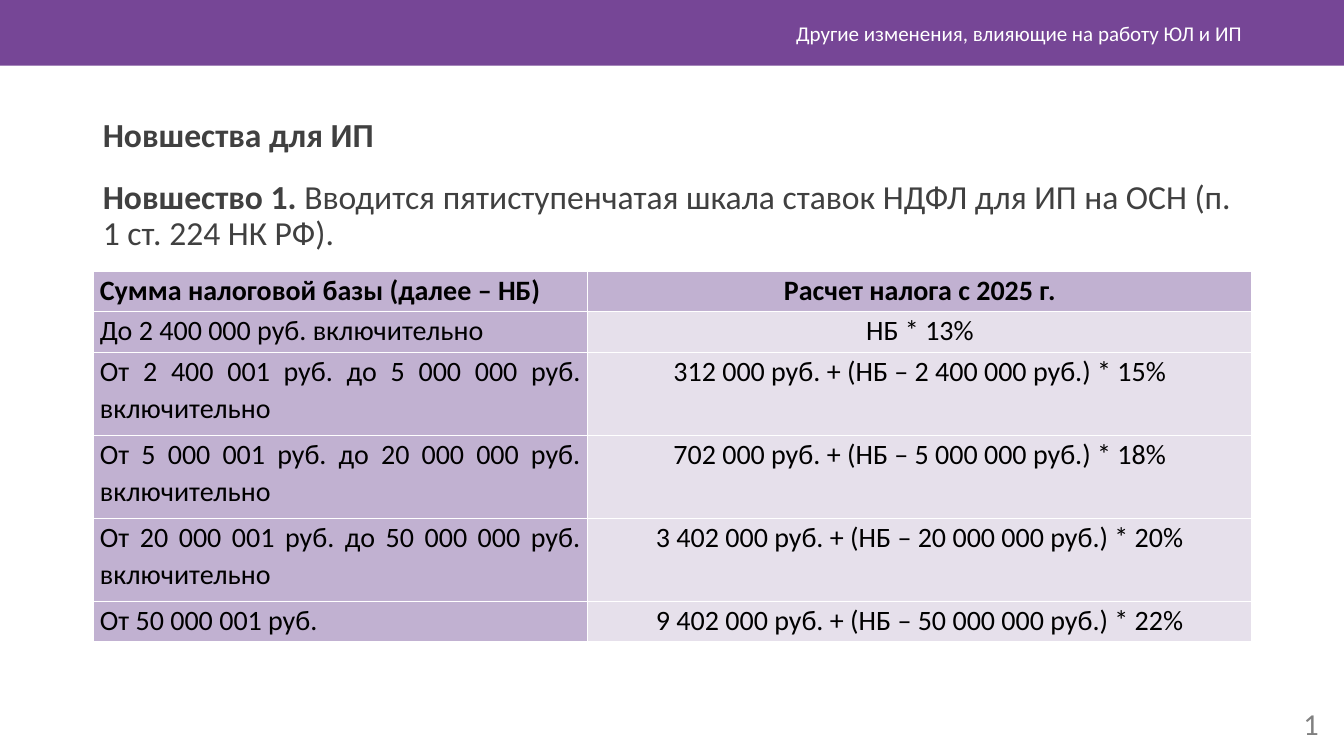
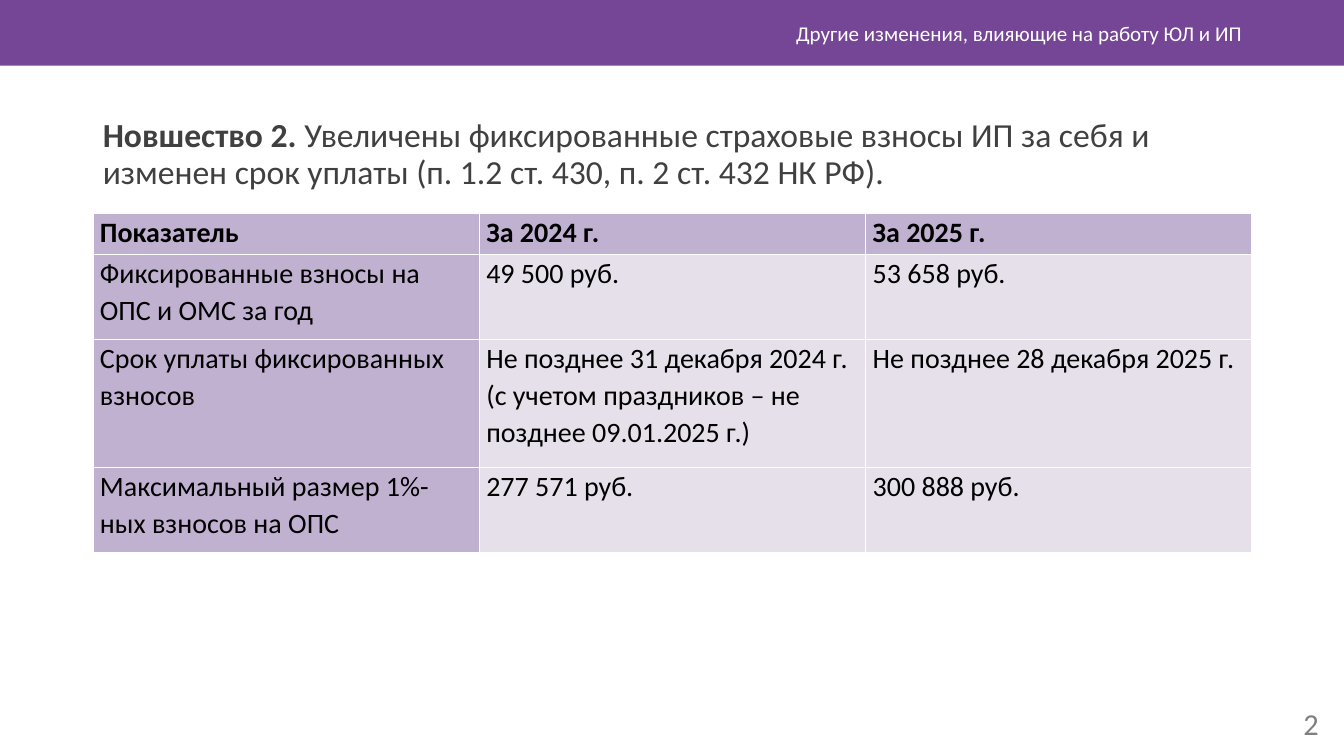
"""Build two slides on tax changes for sole proprietors."""
from pptx import Presentation
from pptx.dml.color import RGBColor as RGB
from pptx.enum.shapes import MSO_SHAPE as SHAPE
from pptx.enum.text import MSO_ANCHOR as ANCHOR, MSO_AUTO_SIZE as AUTOSIZE, PP_ALIGN as ALIGN
from pptx.oxml import parse_xml
from pptx.oxml.ns import nsdecls
from pptx.util import Pt

COLORS = {
    "band": "764696",
    "white": "FFFFFF",
    "body": "404040",
    "number": "808080",
    "cell_text": "000000",
    "label_fill": "C1B1D1",
    "value_fill": "E6E0EB",
}
FONT = "Calibri"
WIDTH, HEIGHT = 960, 540
LEFT, CONTENT_WIDTH = 66.4, 828
TITLE = "Другие изменения, влияющие на работу ЮЛ и ИП"

TAX_ROWS = [
    ("Сумма налоговой базы (далее – НБ)", "Расчет налога с 2025 г."),
    ("До 2 400 000 руб. включительно", "НБ * 13%"),
    ("От 2 400 001 руб. до 5 000 000 руб. включительно",
     "312 000 руб. + (НБ – 2 400 000 руб.) * 15%"),
    ("От 5 000 001 руб. до 20 000 000 руб. включительно",
     "702 000 руб. + (НБ – 5 000 000 руб.) * 18%"),
    ("От 20 000 001 руб. до 50 000 000 руб. включительно",
     "3 402 000 руб. + (НБ – 20 000 000 руб.) * 20%"),
    ("От 50 000 001 руб.", "9 402 000 руб. + (НБ – 50 000 000 руб.) * 22%"),
]
FEE_ROWS = [
    ("Показатель", "За 2024 г.", "За 2025 г."),
    ("Фиксированные взносы на ОПС и ОМС за год", "49 500 руб.", "53 658 руб."),
    ("Срок уплаты фиксированных взносов",
     "Не позднее 31 декабря 2024 г. (с учетом праздников – не позднее 09.01.2025 г.)",
     "Не позднее 28 декабря 2025 г."),
    ("Максимальный размер 1%-ных взносов на ОПС", "277 571 руб.", "300 888 руб."),
]


class Deck:
    """Hold the shared style and the current slide."""

    def __init__(self):
        self.prs = Presentation()
        self.prs.slide_width, self.prs.slide_height = Pt(WIDTH), Pt(HEIGHT)
        self.s = None

    def color(self, name):
        return RGB.from_string(COLORS[name])

    def style(self, r, size, color, bold=False):
        r.font.name, r.font.size, r.font.bold = FONT, Pt(size), bold
        r.font.color.rgb = self.color(color)

    def add_slide(self):
        self.s = self.prs.slides.add_slide(self.prs.slide_layouts[5])
        self.band()
        self.title()
        self.number()

    def band(self):
        sp = self.s.shapes.add_shape(SHAPE.RECTANGLE, 0, 0, Pt(WIDTH), Pt(47))
        sp.shadow.inherit = False
        sp.fill.solid()
        sp.fill.fore_color.rgb = self.color("band")
        sp.line.fill.background()
        self.s.shapes.element.insert(2, sp.element)

    def title(self):
        sp = self.s.shapes.title
        sp.left, sp.top, sp.width, sp.height = Pt(255), Pt(9), Pt(639.4), Pt(29)
        tf = sp.text_frame
        tf.text = TITLE
        tf.auto_size, tf.vertical_anchor = AUTOSIZE.NONE, ANCHOR.MIDDLE
        p = tf.paragraphs[0]
        p.alignment = ALIGN.RIGHT
        self.style(p.runs[0], 15, "white")

    def text_frame(self, left, top, width, height):
        sp = self.s.shapes.add_textbox(Pt(left), Pt(top), Pt(width), Pt(height))
        sp.text_frame.word_wrap = True
        return sp.text_frame

    def number(self):
        tf = self.text_frame(901, 502, 48, 29)
        tf.vertical_anchor = ANCHOR.MIDDLE
        p = tf.paragraphs[0]
        p.alignment = ALIGN.RIGHT
        p._p.append(parse_xml(
            f'<a:fld {nsdecls("a")} id="{{B6F15528-21DE-4FAA-801E-634DDDAF4B2B}}" type="slidenum">'
            f'<a:rPr lang="ru-RU" sz="2170"><a:solidFill><a:srgbClr val="{COLORS["number"]}"/>'
            f'</a:solidFill><a:latin typeface="{FONT}"/></a:rPr>'
            f'<a:t>{len(self.prs.slides)}</a:t></a:fld>'))

    def body(self, *paragraphs):
        tf = self.text_frame(LEFT, 81.4, CONTENT_WIDTH, 421)
        for i, (lead, rest) in enumerate(paragraphs):
            p = tf.add_paragraph() if i else tf.paragraphs[0]
            p.line_spacing, p.space_after = 0.9, Pt(8)
            p.space_before = Pt(10 if i else 0)
            for text, bold in ((lead, True), (rest, False)):
                if text:
                    r = p.add_run()
                    r.text = text
                    self.style(r, 24, "body", bold)

    def table(self, top, rows, widths, heights, aligns):
        tbl = self.s.shapes.add_table(len(rows), len(widths), Pt(LEFT), Pt(top),
                                      Pt(sum(widths)), Pt(sum(heights))).table
        tbl.horz_banding = False
        for col, width in zip(tbl.columns, widths):
            col.width = Pt(width)
        for i, (row, height) in enumerate(zip(rows, heights)):
            tbl.rows[i].height = Pt(height)
            for j, text in enumerate(row):
                self.cell(tbl.cell(i, j), text, aligns[j], i == 0, i == 0 or j == 0)

    def cell(self, cell, text, align, bold, label):
        cell.margin_left = cell.margin_right = Pt(5)
        cell.margin_top = cell.margin_bottom = 0
        cell.fill.solid()
        cell.fill.fore_color.rgb = self.color("label_fill" if label else "value_fill")
        cell.text_frame.text = text
        p = cell.text_frame.paragraphs[0]
        p.alignment, p.line_spacing = align, 1.07
        self.style(p.runs[0], 20, "cell_text", bold)


def main():
    deck = Deck()

    deck.add_slide()
    deck.body(
        ("Новшества для ИП", ""),
        ("Новшество 1. ", "Вводится пятиступенчатая шкала ставок НДФЛ для ИП на ОСН "
                          "(п. 1 ст. 224 НК РФ)."))
    deck.table(193.7, TAX_ROWS, [353.5, 474.5], [29, 29, 59.3, 59.3, 59.3, 29],
               [ALIGN.JUSTIFY, ALIGN.CENTER])

    deck.add_slide()
    deck.body(
        ("Новшество 2. ", "Увеличены фиксированные страховые взносы ИП за себя и изменен "
                          "срок уплаты (п. 1.2 ст. 430, п. 2 ст. 432 НК РФ)."))
    deck.table(152.6, FEE_ROWS, [CONTENT_WIDTH / 3] * 3, [29.5, 60.5, 91.5, 60.5],
               [ALIGN.LEFT] * 3)

    deck.prs.save("out.pptx")


if __name__ == "__main__":
    main()
